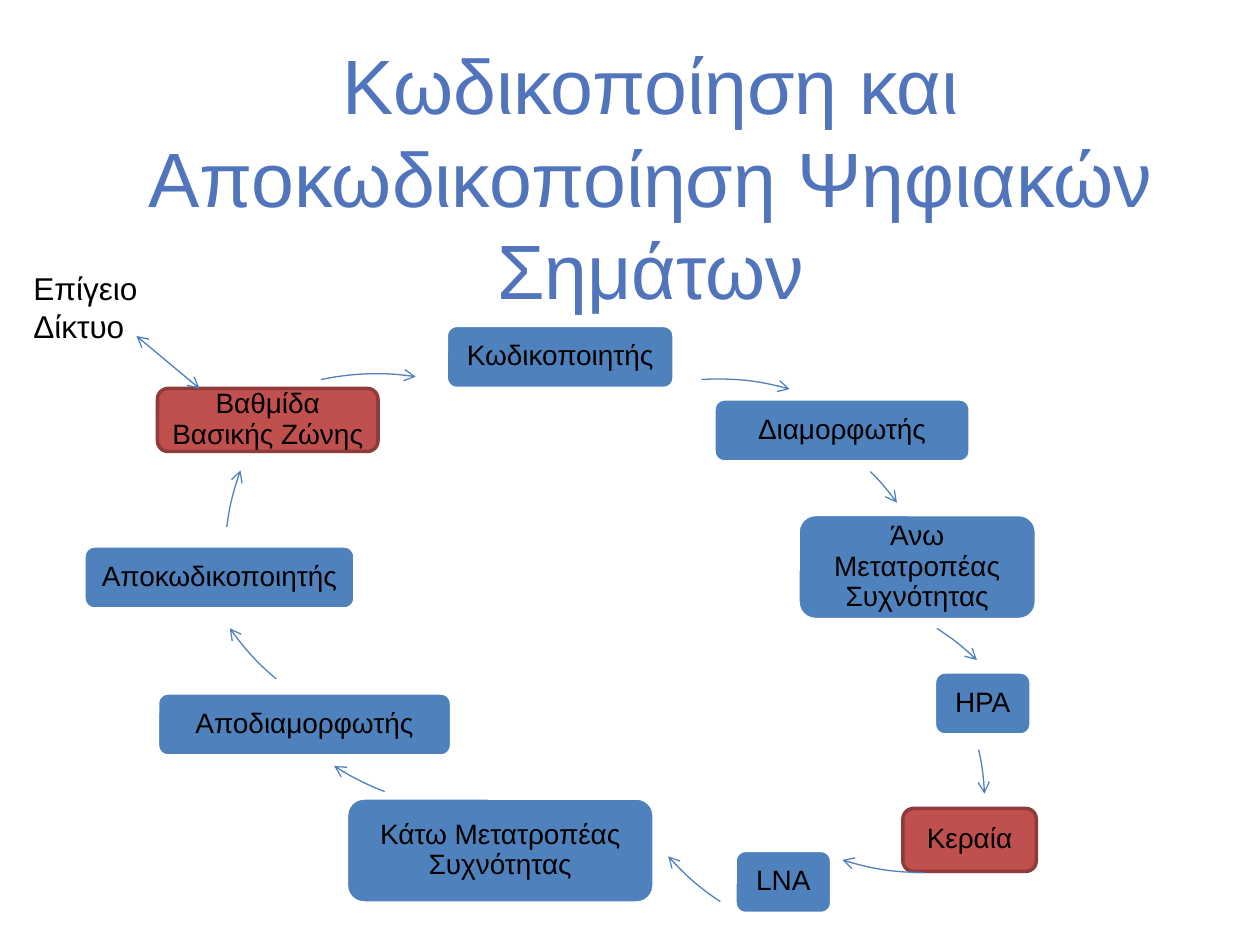
from math import atan2, degrees

from pptx import Presentation
from pptx.dml.color import RGBColor
from pptx.enum.shapes import MSO_CONNECTOR, MSO_SHAPE
from pptx.enum.text import MSO_ANCHOR, PP_ALIGN
from pptx.oxml.ns import qn
from pptx.util import Inches, Pt
from lxml import etree

ROUND = MSO_SHAPE.ROUNDED_RECTANGLE
ARC = MSO_SHAPE.ARC
LINE = MSO_CONNECTOR.STRAIGHT
LEFT, MID = PP_ALIGN.LEFT, PP_ALIGN.CENTER
TOP, CORE = MSO_ANCHOR.TOP, MSO_ANCHOR.MIDDLE

WIDE, HIGH = 10, 7.5
COLS = 120
CELL = WIDE / COLS
RING = 49.9

BLUE = ("4F81BD", "FFFFFF")
RED = ("C0504D", "8E3B39")

STEPS = [
    ("Κωδικοποιητής", (42.5, 31, 21.7, 6), BLUE),
    ("Διαμορφωτής", (68, 38, 24.4, 6), BLUE),
    ("Άνω Μετατροπέας Συχνότητας", (76, 49, 22.7, 10), BLUE),
    ("ΗΡΑ", (89, 64, 9.2, 6), BLUE),
    ("Κεραία", (86, 77, 12.7, 6), RED),
    ("LNA", (70, 81, 9.2, 6), BLUE),
    ("Κάτω Μετατροπέας Συχνότητας", (33, 76, 29.3, 10), BLUE),
    ("Αποδιαμορφωτής", (15, 66, 28, 6), BLUE),
    ("Αποκωδικοποιητής", (8, 52, 25.8, 6), BLUE),
    ("Βαθμίδα Βασικής Ζώνης", (15, 37, 21, 6), RED),
]

BENDS = [
    ((43.4, 36.1), (66.8, 36.2), (75.2, 37.1)),
    ((40.3, 37.6), (82.9, 44.9), (85.4, 47.9)),
    ((50.8, 55.9), (89.2, 59.9), (93, 62.9)),
    ((43.9, 51.8), (93.2, 71.4), (93.8, 75.6)),
    ((62.9, 33.2), (88, 83.2), (80.2, 82)),
    ((57.4, 40.1), (68.6, 85.9), (63.6, 81.6)),
    ((20.5, 27.1), (36.6, 75.5), (31.8, 73)),
    ((17.4, 20.6), (26.3, 64.7), (21.8, 59.9)),
    ((21.4, 28.4), (21.6, 50.2), (22.9, 44.8)),
    ((10.9, 35.6), (30.6, 36.2), (39.6, 35.9)),
]


def tint(code):
    return RGBColor.from_string(code)


def grid(*cells):
    return [Inches(cell * CELL) for cell in cells]


def write(frame, text, size=16, color="000000", align=MID, anchor=TOP,
          space=None, inset=None):
    frame.word_wrap = True
    frame.vertical_anchor = anchor
    if inset is not None:
        frame.margin_left = frame.margin_right = Inches(inset)
        frame.margin_top = frame.margin_bottom = Inches(inset)
    para = frame.paragraphs[0]
    para.alignment = align
    if space:
        para.line_spacing = space
    run = para.add_run()
    run.text = text
    run.font.name = "Arial"
    run.font.size = Pt(size)
    run.font.color.rgb = tint(color)


class Board:
    def __init__(self, slide):
        self.shapes = slide.shapes

    def stroke(self, item, color, width, *tips):
        item.line.color.rgb = tint(color)
        item.line.width = Pt(width)
        pen = item.line._get_or_add_ln()
        for tip in tips:
            etree.SubElement(pen, qn(f"a:{tip}"), type="arrow")

    def text(self, text, area, **style):
        box = self.shapes.add_textbox(*grid(*area))
        write(box.text_frame, text, **style)

    def step(self, text, area, look):
        fill, edge = look
        box = self.shapes.add_shape(ROUND, *grid(*area))
        box.shadow.inherit = False
        box.fill.solid()
        box.fill.fore_color.rgb = tint(fill)
        self.stroke(box, edge, 2)
        write(box.text_frame, text, anchor=CORE, space=0.9, inset=0.04)

    def bend(self, spot, start, end):
        arc = self.shapes.add_shape(ARC, *grid(*spot, RING, RING))
        arc.shadow.inherit = False
        arc.fill.background()
        for place, (x, y) in enumerate((start, end)):
            turn = atan2(y - spot[1] - RING / 2, x - spot[0] - RING / 2)
            arc.adjustments[place] = degrees(turn) % 360 * 0.6
        self.stroke(arc, BLUE[0], 0.75, "tailEnd")

    def link(self, start, end):
        line = self.shapes.add_connector(LINE, *grid(*start, *end))
        self.stroke(line, "4B7EBC", 0.75, "headEnd", "tailEnd")
        etree.SubElement(line._element.spPr, qn("a:effectLst"))


def main():
    deck = Presentation()
    deck.slide_width, deck.slide_height = Inches(WIDE), Inches(HIGH)
    board = Board(deck.slides.add_slide(deck.slide_layouts[6]))
    board.text("Κωδικοποίηση και Αποκωδικοποίηση Ψηφιακών Σημάτων",
               (4, 3, 116, 27.8), size=44, color="5075BC")
    for step, bend in zip(STEPS, BENDS):
        board.step(*step)
        board.bend(*bend)
    board.text("Επίγειο Δίκτυο", (2, 25, 17, 8.5), size=18, align=LEFT)
    board.link((19, 37), (13, 32))
    deck.save("out.pptx")


if __name__ == "__main__":
    main()
